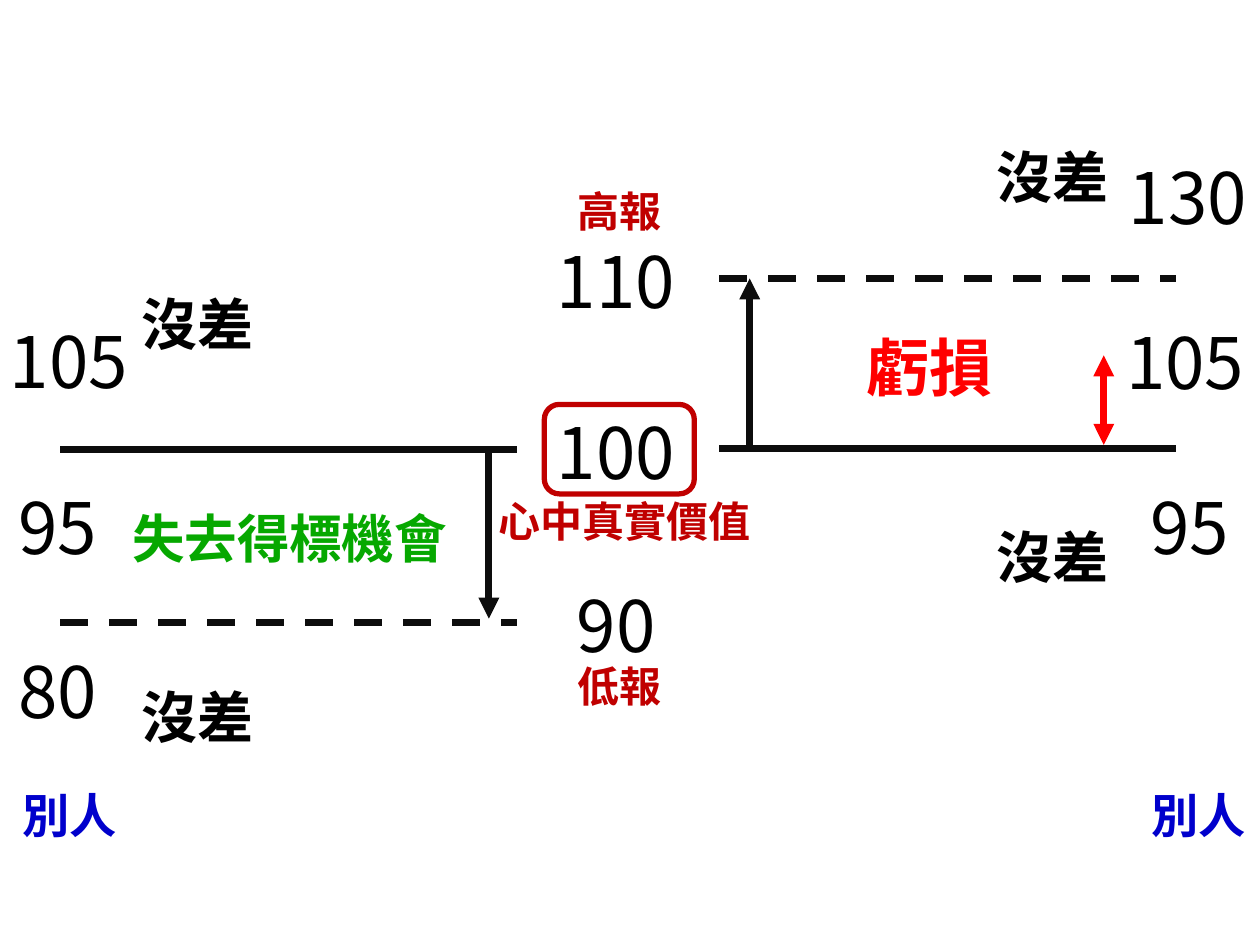
from dataclasses import dataclass

import pptx
import pptx.dml.color
import pptx.enum.dml
import pptx.enum.shapes
import pptx.enum.text
import pptx.oxml
import pptx.oxml.ns
import pptx.util
from pptx.dml.color import RGBColor
from pptx.util import Inches

BLACK = RGBColor(0x00, 0x00, 0x00)
INK = RGBColor(0x0D, 0x0D, 0x0D)
RED = RGBColor(0xFF, 0x00, 0x00)
CRIMSON = RGBColor(0xC0, 0x00, 0x00)
GREEN = RGBColor(0x06, 0xA8, 0x00)
BLUE = RGBColor(0x00, 0x00, 0xCC)

FONT = "Noto Sans CJK SC"
LEFT_ALIGN = pptx.enum.text.PP_ALIGN.LEFT
CENTER = pptx.enum.text.PP_ALIGN.CENTER

LEFT_START, LEFT_END = 0.48, 4.1
RIGHT_START, RIGHT_END = 5.71, 9.33
LEFT_VALUE, RIGHT_VALUE = 3.57, 3.56
HIGH_BID, LOW_BID = 2.21, 4.94
MIDDLE = 4.32
LABEL_WIDTH = 1.19


@dataclass(frozen=True)
class Style:
    size: float
    color: RGBColor
    height: float
    bold: bool = True
    wrap: bool = True
    align: pptx.enum.text.PP_ALIGN = CENTER


@dataclass(frozen=True)
class Label:
    text: str
    left: float
    top: float
    width: float
    style: Style


@dataclass(frozen=True)
class Rule:
    start: tuple[float, float]
    end: tuple[float, float]
    color: RGBColor = INK
    dashed: bool = False
    arrows: tuple[str, ...] = ()


NUMBER = Style(40.5, BLACK, 0.78, bold=False, wrap=False, align=LEFT_ALIGN)
LOSS = Style(36, RED, 0.71, wrap=False, align=LEFT_ALIGN)
MISSED = Style(30, GREEN, 0.61, wrap=False, align=LEFT_ALIGN)
BID = Style(24, CRIMSON, 0.5)
OTHERS = Style(27, BLUE, 0.56, align=LEFT_ALIGN)
NO_MATTER = Style(32, BLACK, 0.64)

NUMBERS = [
    ("100", MIDDLE, 3.19),
    ("90", 4.48, 4.57),
    ("110", MIDDLE, 1.84),
    ("80", 0.05, 5.09),
    ("95", 0.05, 3.79),
    ("105", -0.02, 2.47),
    ("95", 9.03, 3.79),
    ("105", 8.84, 2.48),
    ("130", 8.86, 1.17),
]
NUMBER_WIDTHS = {2: 0.86, 3: LABEL_WIDTH}

LABELS = [
    *(Label(text, left, top, NUMBER_WIDTHS[len(text)], NUMBER)
      for text, left, top in NUMBERS),
    Label("虧損", 6.78, 2.56, 1.21, LOSS),
    Label("失去得標機會", 0.95, 3.97, 2.73, MISSED),
    Label("心中真實價值", 3.79, 3.88, 2.33, BID),
    *(Label("別人", left, 6.19, 0.96, OTHERS) for left in (9.04, 0.08)),
    Label("高報", MIDDLE, 1.42, LABEL_WIDTH, BID),
    Label("低報", MIDDLE, 5.19, LABEL_WIDTH, BID),
    *(Label("沒差", left, top, LABEL_WIDTH, NO_MATTER)
      for left, top in ((7.76, 4.1), (7.76, 1.08), (0.97, 5.37), (0.97, 2.25))),
]

RULES = [
    Rule((RIGHT_START, RIGHT_VALUE), (RIGHT_END, RIGHT_VALUE)),
    Rule((LEFT_START, LEFT_VALUE), (LEFT_END, LEFT_VALUE)),
    Rule((RIGHT_START, HIGH_BID), (RIGHT_END, HIGH_BID), dashed=True),
    Rule((LEFT_START, LOW_BID), (LEFT_END, LOW_BID), dashed=True),
    Rule((5.95, RIGHT_VALUE), (5.95, HIGH_BID), arrows=("tailEnd",)),
    Rule((3.88, LEFT_VALUE), (3.88, 4.91), arrows=("tailEnd",)),
    Rule((8.76, 2.82), (8.76, 3.53), RED, arrows=("headEnd", "tailEnd")),
]


def add_child(parent, tag: str, **attributes: str) -> None:
    child = parent.makeelement(pptx.oxml.ns.qn(tag), attributes)
    parent.append(child)


def draw_rule(page, rule: Rule) -> None:
    connector = page.shapes.add_connector(
        pptx.enum.shapes.MSO_CONNECTOR.STRAIGHT,
        *(Inches(value) for value in (*rule.start, *rule.end)))
    connector.line.color.rgb = rule.color
    connector.line.width = pptx.util.Pt(4)
    if rule.dashed:
        connector.line.dash_style = pptx.enum.dml.MSO_LINE.DASH
    for arrow in rule.arrows:
        add_child(connector.line._get_or_add_ln(), f"a:{arrow}", type="triangle")
    add_child(connector._element.spPr, "a:effectLst")


def draw_label(page, label: Label) -> None:
    style = label.style
    box = page.shapes.add_textbox(
        *(Inches(value) for value in (label.left, label.top, label.width, style.height)))
    frame = box.text_frame
    frame.word_wrap = style.wrap
    frame.auto_size = pptx.enum.text.MSO_AUTO_SIZE.SHAPE_TO_FIT_TEXT
    para = frame.paragraphs[0]
    para.alignment = style.align
    span = para.add_run()
    span.text = label.text
    span.font.color.rgb = style.color
    formats = {"name": FONT, "size": pptx.util.Pt(style.size), "bold": style.bold}
    for name, value in formats.items():
        setattr(span.font, name, value)
    add_child(span.font._element, "a:ea", typeface=FONT)


def draw_value_frame(page) -> None:
    outline = page.shapes.add_shape(
        pptx.enum.shapes.MSO_SHAPE.ROUNDED_RECTANGLE,
        Inches(MIDDLE), Inches(3.21), Inches(LABEL_WIDTH), Inches(0.71))
    outline.shadow.inherit = False
    outline.fill.background()
    outline.line.color.rgb = CRIMSON
    outline.line.width = pptx.util.Pt(3)


def main() -> None:
    deck = pptx.Presentation()
    deck.slide_width, deck.slide_height = Inches(10), Inches(7.5)
    page = deck.slides.add_slide(deck.slide_layouts[6])
    for rule in RULES:
        draw_rule(page, rule)
    for label in LABELS:
        draw_label(page, label)
    draw_value_frame(page)
    deck.save("out.pptx")


if __name__ == "__main__":
    main()
